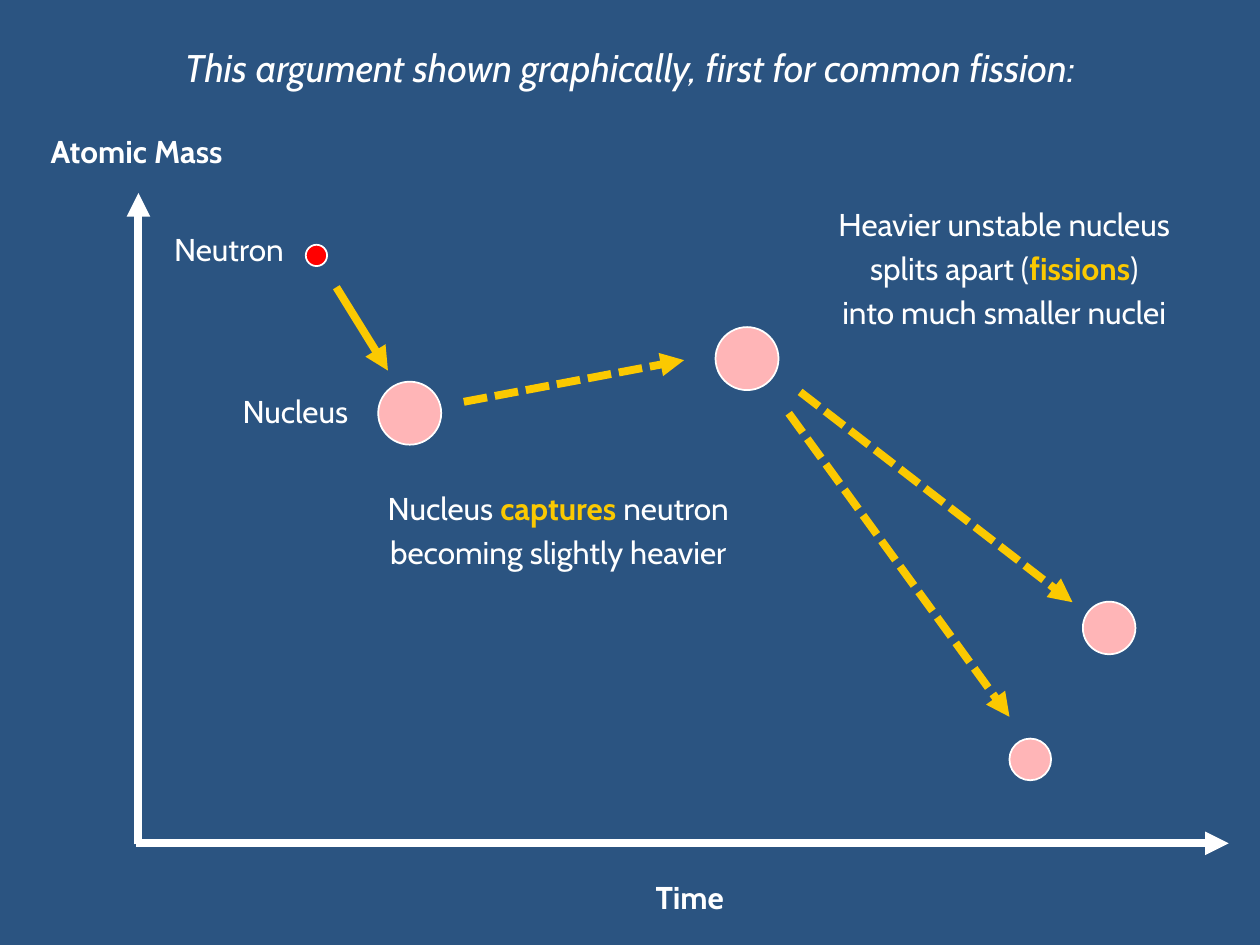
from lxml import etree
from pptx import Presentation
from pptx.dml.color import RGBColor
from pptx.enum.dml import MSO_LINE
from pptx.enum.shapes import MSO_CONNECTOR, MSO_SHAPE
from pptx.enum.text import MSO_ANCHOR, PP_ALIGN
from pptx.oxml.ns import qn
from pptx.util import Cm, Pt

STRAIGHT = MSO_CONNECTOR.STRAIGHT
OVAL = MSO_SHAPE.OVAL
DASHED = MSO_LINE.SQUARE_DOT
CENTER, RIGHT = PP_ALIGN.CENTER, PP_ALIGN.RIGHT
TOP, MIDDLE = MSO_ANCHOR.TOP, MSO_ANCHOR.MIDDLE
WHITE, YELLOW, PINK, RED, NAVY = "FFFFFF", "FBC901", "FFB5B7", "FF0000", "2B5481"


def color(hex_value):
    return RGBColor.from_string(hex_value)


def add_text(lines, left, top, width, height, size=18, bold=False,
             italic=False, align=CENTER, anchor=TOP, accent=None):
    box = slide.shapes.add_textbox(Cm(left), Cm(top), Cm(width), Cm(height))
    frame = box.text_frame
    frame.word_wrap = True
    frame.vertical_anchor = anchor
    for index, line in enumerate(lines):
        paragraph = frame.paragraphs[0] if index == 0 else frame.add_paragraph()
        paragraph.alignment = align
        if index:
            paragraph.space_before = Pt(3.6)
        before, found, after = line.partition(accent) if accent else (line, "", "")
        for part in filter(None, (before, found, after)):
            run = paragraph.add_run()
            run.text = part
            run.font.name = "Cabin"
            run.font.size = Pt(size)
            run.font.italic = italic
            run.font.bold = bold or part == accent
            run.font.color.rgb = color(YELLOW if part == accent else WHITE)


prs = Presentation()
prs.slide_width, prs.slide_height = Cm(25.4), Cm(19.05)
slide = prs.slides.add_slide(prs.slide_layouts[6])
slide.background.fill.solid()
slide.background.fill.fore_color.rgb = color(NAVY)

add_text(["This argument shown graphically, first for common fission:"],
         0.85, 0.71, 23.7, 1.27, size=22, italic=True, anchor=MIDDLE)
add_text(["Atomic Mass"], 0, 2.54, 5.51, 1.27, bold=True)
add_text(["Time"], 11.68, 17.58, 4.45, 1.27, bold=True)
add_text(["Neutron"], 3, 4.52, 2.97, 1.27, align=RIGHT)
add_text(["Nucleus"], 3.66, 7.77, 3.61, 1.27, align=RIGHT)
add_text(["Nucleus captures neutron", "becoming slightly heavier"],
         6.81, 9.73, 8.89, 1.7, accent="captures")
add_text(["Heavier unstable nucleus", "splits apart (fissions)",
          "into much smaller nuclei"],
         15.9, 4.01, 8.69, 2.74, accent="fissions")

arrows = [
    (2.79, 17.02, 2.79, 3.89, WHITE, None),
    (2.74, 17, 24.77, 17, WHITE, None),
    (6.78, 5.79, 7.82, 7.47, YELLOW, None),
    (9.35, 8.1, 13.79, 7.26, YELLOW, DASHED),
    (16.13, 7.9, 21.62, 12.14, YELLOW, DASHED),
    (15.9, 8.33, 20.35, 14.45, YELLOW, DASHED),
]
for x1, y1, x2, y2, stroke, dash in arrows:
    arrow = slide.shapes.add_connector(STRAIGHT, Cm(x1), Cm(y1), Cm(x2), Cm(y2))
    arrow.line.color.rgb = color(stroke)
    arrow.line.width = Pt(4.5)
    if dash:
        arrow.line.dash_style = dash
    properties = arrow.element.spPr
    etree.SubElement(properties.find(qn("a:ln")), qn("a:tailEnd"), type="triangle")
    etree.SubElement(properties, qn("a:effectLst"))

particles = [
    (6.38, 5.15, 0.43, RED),
    (8.26, 8.33, 1.27, PINK),
    (15.06, 7.23, 1.27, PINK),
    (22.36, 12.66, 1.06, PINK),
    (20.77, 15.31, 0.84, PINK),
]
for center_x, center_y, diameter, fill in particles:
    particle = slide.shapes.add_shape(
        OVAL, Cm(center_x - diameter / 2), Cm(center_y - diameter / 2),
        Cm(diameter), Cm(diameter))
    particle.shadow.inherit = False
    particle.fill.solid()
    particle.fill.fore_color.rgb = color(fill)
    particle.line.color.rgb = color(WHITE)
    particle.line.width = Pt(1)

prs.save("out.pptx")
